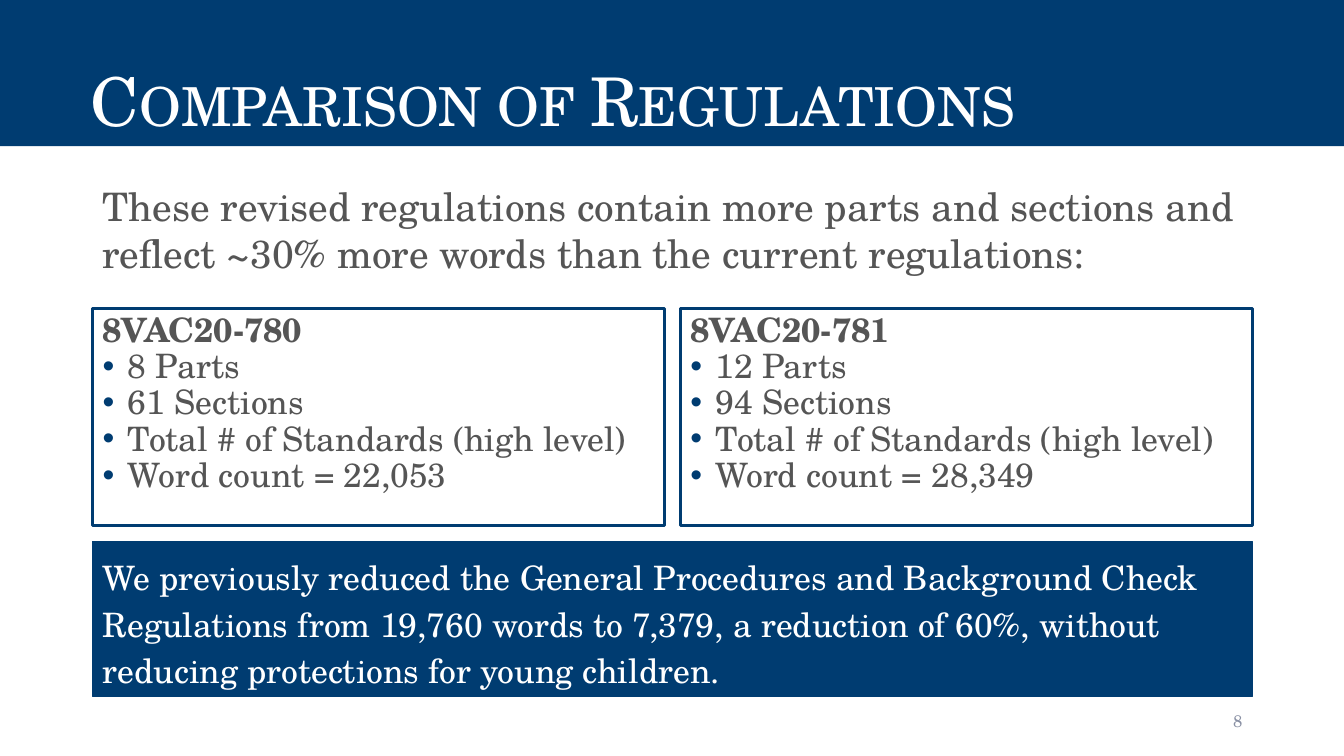
from lxml import etree
from pptx import Presentation
from pptx import util as u
from pptx.dml.color import RGBColor
from pptx.enum import shapes, text
from pptx.oxml.ns import qn

FONT = "TeX Gyre Schola"
COLORS = {"navy": "003C71", "body": "555555", "white": "FFFFFF", "number": "888FA3"}
LEFT, WIDTH, GAP = 0.92, 11.5, 0.16
CARD_WIDTH = (WIDTH - GAP) / 2


def style(para, words, size, color, bold=False):
    """Fill a paragraph and set its font."""
    para.text = words
    para.font.name = FONT
    para.font.size = u.Pt(size)
    para.font.bold = bold
    para.font.color.rgb = RGBColor.from_string(COLORS[color])


def add_box(left, top, width, height, fill=None, line=None):
    """Add a rectangle with wrapped, top-left text."""
    box = page.shapes.add_shape(shapes.MSO_SHAPE.RECTANGLE, u.Inches(left),
                                u.Inches(top), u.Inches(width), u.Inches(height))
    box.shadow.inherit = False
    if fill:
        box.fill.solid()
        box.fill.fore_color.rgb = RGBColor.from_string(COLORS[fill])
    else:
        box.fill.background()
    if line:
        box.line.color.rgb = RGBColor.from_string(COLORS["navy"])
        box.line.width = u.Pt(line)
    else:
        box.line.fill.background()
    frame = box.text_frame
    frame.word_wrap = True
    frame.vertical_anchor = text.MSO_ANCHOR.TOP
    frame.paragraphs[0].alignment = text.PP_ALIGN.LEFT
    return frame


deck = Presentation()
deck.slide_width, deck.slide_height = u.Inches(13.33), u.Inches(7.5)
page = deck.slides.add_slide(deck.slide_layouts[5])

# Title band
title = page.shapes.title
title.left, title.top = 0, 0
title.width, title.height = deck.slide_width, u.Inches(1.45)
title.fill.solid()
title.fill.fore_color.rgb = RGBColor.from_string(COLORS["navy"])
frame = title.text_frame
frame.margin_left = u.Inches(0.9)
frame.word_wrap = True
frame.auto_size = text.MSO_AUTO_SIZE.NONE
frame.vertical_anchor = text.MSO_ANCHOR.BOTTOM
para = frame.paragraphs[0]
style(para, "Comparison of Regulations", 48, "white")
para.alignment = text.PP_ALIGN.LEFT
para.line_spacing = 0.9
para.runs[0].font._element.set("cap", "small")

# Introduction
intro = page.shapes.add_textbox(u.Inches(LEFT), u.Inches(1.76), u.Inches(WIDTH), u.Inches(1.37))
intro.text_frame.word_wrap = True
para = intro.text_frame.paragraphs[0]
style(para, "These revised regulations contain more parts and sections and "
      "reflect ~30% more words than the current regulations:", 28, "body")
para.space_before = u.Pt(10)

# Regulation cards
cards = [
    ("8VAC20-780", "8 Parts", "61 Sections", "22,053"),
    ("8VAC20-781", "12 Parts", "94 Sections", "28,349"),
]
for column, (heading, parts, sections, count) in enumerate(cards):
    frame = add_box(LEFT + column * (CARD_WIDTH + GAP), 3.06, CARD_WIDTH, 2.15, line=2.25)
    para = frame.paragraphs[0]
    style(para, heading, 24, "body", bold=True)
    para.line_spacing = 0.9
    for item in (parts, sections, "Total # of Standards (high level)", f"Word count = {count}"):
        para = frame.add_paragraph()
        style(para, item, 24, "body")
        para.alignment = text.PP_ALIGN.LEFT
        para.line_spacing = 0.9
        props = para._p.get_or_add_pPr()
        props.set("marL", str(u.Inches(0.25)))
        props.set("indent", str(-u.Inches(0.25)))
        bullet_color = etree.Element(qn("a:buClr"))
        etree.SubElement(bullet_color, qn("a:srgbClr"), val=COLORS["navy"])
        bullet_font = etree.Element(qn("a:buFont"), typeface="Arial")
        bullet = etree.Element(qn("a:buChar"), char="•")
        for element in (bullet_color, bullet_font, bullet):
            props.find(qn("a:defRPr")).addprevious(element)

# Closing callout
frame = add_box(LEFT, 5.37, WIDTH, 1.54, fill="navy", line=0.75)
frame.margin_top = frame.margin_bottom = u.Inches(0.1)
para = frame.paragraphs[0]
style(para, "We previously reduced the General Procedures and Background Check "
      "Regulations from 19,760 words to 7,379, a reduction of 60%, without "
      "reducing protections for young children.", 24, "white")
para.line_spacing = 1.15
para.space_before = para.space_after = u.Pt(12)

# Page number
number = page.shapes.add_textbox(u.Inches(9.42), u.Inches(6.95), u.Inches(3), u.Inches(0.4))
number.text_frame.vertical_anchor = text.MSO_ANCHOR.MIDDLE
number.text_frame.word_wrap = True
para = number.text_frame.paragraphs[0]
style(para, "8", 12, "number")
para.alignment = text.PP_ALIGN.RIGHT

deck.save("out.pptx")
